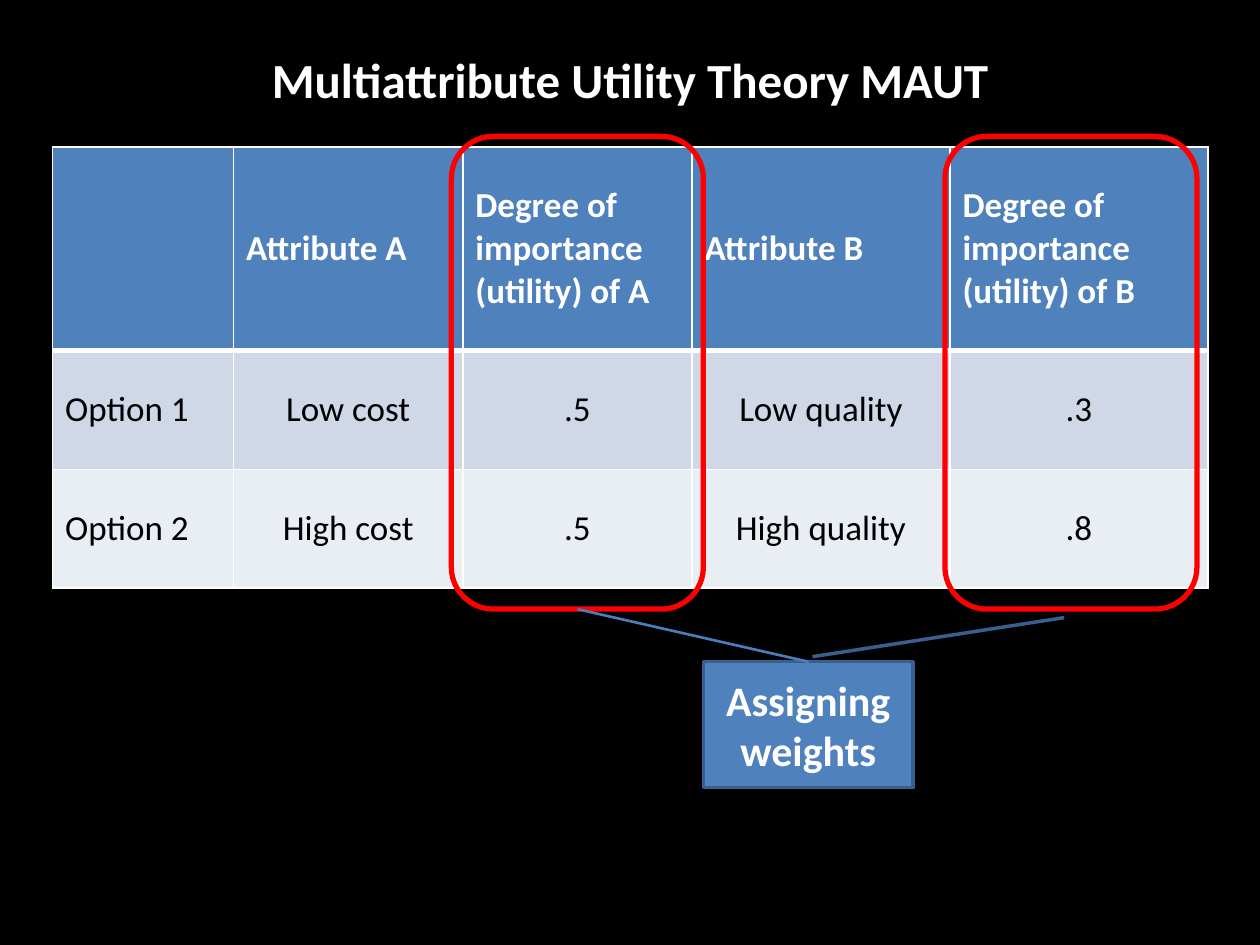
from lxml import etree
from pptx import Presentation
from pptx.dml.color import RGBColor
from pptx.enum.shapes import MSO_CONNECTOR, MSO_SHAPE
from pptx.enum.text import MSO_ANCHOR, PP_ALIGN
from pptx.oxml.ns import qn
from pptx.util import Cm, Pt

LEFT, CENTER = PP_ALIGN.LEFT, PP_ALIGN.CENTER
MIDDLE = MSO_ANCHOR.MIDDLE
ROUND, CALLOUT = MSO_SHAPE.ROUNDED_RECTANGLE, MSO_SHAPE.LINE_CALLOUT_1
STRAIGHT = MSO_CONNECTOR.STRAIGHT
WHITE, BLACK, BLUE, RED = "FFFFFF", "000000", "4F81BD", "FF0000"


def paint(color, code):
    color.rgb = RGBColor.from_string(code)


def write(frame, text, size, code, bold, align):
    frame.word_wrap = True
    para = frame.paragraphs[0]
    para.alignment = align
    run = para.add_run()
    run.text = text
    run.font.name = "Calibri"
    run.font.size = Pt(size)
    run.font.bold = bold
    paint(run.font.color, code)


# Slide with black background
deck = Presentation()
deck.slide_width, deck.slide_height = Cm(25.4), Cm(19.05)
slide = deck.slides.add_slide(deck.slide_layouts[6])
slide.background.fill.solid()
paint(slide.background.fill.fore_color, BLACK)
shapes = slide.shapes

# Title
title = shapes.add_textbox(Cm(0), Cm(0), Cm(25.4), Cm(3.18)).text_frame
title.vertical_anchor = MIDDLE
write(title, "Multiattribute Utility Theory MAUT", 28, WHITE, True, CENTER)

# Utility table
rows = [
    ["", "Attribute A", "Degree of importance (utility) of A",
     "Attribute B", "Degree of importance (utility) of B"],
    ["Option 1", "Low cost", ".5", "Low quality", ".3"],
    ["Option 2", "High cost", ".5", "High quality", ".8"],
]
fills = [BLUE, "D0D8E8", "E9EDF4"]
widths = [3.65, 4.62, 4.62, 5.2, 5.2]
heights = [4.11, 2.39, 2.39]
table = shapes.add_table(3, 5, Cm(1.06), Cm(2.96),
                         Cm(sum(widths)), Cm(sum(heights))).table
for col, width in zip(table.columns, widths):
    col.width = Cm(width)
for row, height in zip(table.rows, heights):
    row.height = Cm(height)

for r, texts in enumerate(rows):
    head = r == 0
    for c, text in enumerate(texts):
        cell = table.cell(r, c)
        cell.vertical_anchor = MIDDLE
        # Borders go before the fill; the rule under the header is thick
        props = cell._tc.get_or_add_tcPr()
        for side in ("lnL", "lnR", "lnT", "lnB"):
            thick = (r, side) in ((0, "lnB"), (1, "lnT"))
            line = etree.SubElement(props, qn("a:" + side),
                                    w=str(Pt(3 if thick else 1)))
            solid = etree.SubElement(line, qn("a:solidFill"))
            etree.SubElement(solid, qn("a:srgbClr"), val=WHITE)
        cell.fill.solid()
        paint(cell.fill.fore_color, fills[r])
        if text:
            write(cell.text_frame, text, 20, WHITE if head else BLACK, head,
                  LEFT if head or c == 0 else CENTER)

# Red frames around the weight columns
for left in (9.1, 19.05):
    frame = shapes.add_shape(ROUND, Cm(left), Cm(2.75), Cm(5.08), Cm(9.53))
    frame.shadow.inherit = False
    frame.fill.background()
    paint(frame.line.color, RED)
    frame.line.width = Pt(3)

# Callout pointing at the right frame
note = shapes.add_shape(CALLOUT, Cm(14.18), Cm(13.34), Cm(4.23), Cm(2.54))
for i, value in enumerate([-0.04, 0.52, -0.35, 1.72]):
    note.adjustments[i] = value
note.shadow.inherit = False
note.fill.solid()
paint(note.fill.fore_color, BLUE)
paint(note.line.color, "3A5F8C")
note.line.width = Pt(2)
note.text_frame.vertical_anchor = MIDDLE
write(note.text_frame, "Assigning weights", 24, WHITE, True, CENTER)

# Line to the left frame
link = shapes.add_connector(STRAIGHT, Cm(16.3), Cm(13.34), Cm(11.64), Cm(12.28))
paint(link.line.color, "4B7EBC")
link.line.width = Pt(1.5)
etree.SubElement(link._element.spPr, qn("a:effectLst"))

deck.save("out.pptx")
